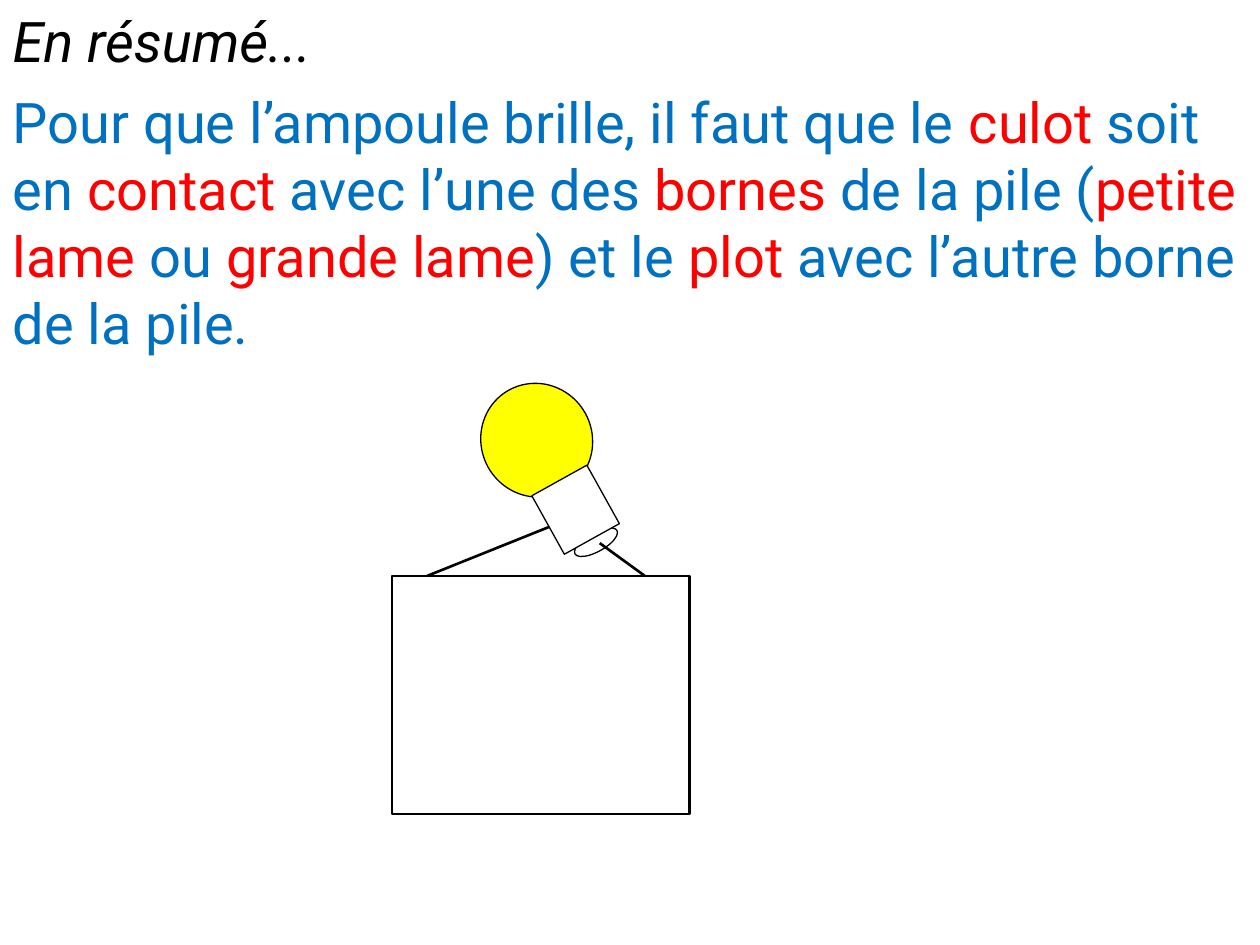
"""Build a summary slide on how a bulb must touch a battery to light up."""
from lxml import etree
from pptx import Presentation, util as u
from pptx.dml.color import RGBColor
from pptx.enum import shapes, text
from pptx.oxml import ns

FONT, SIZE = "Roboto", 32
BLACK, WHITE, BLUE, RED, YELLOW = "000000", "FFFFFF", "0070C0", "FF0000", "FFFF00"
WIDTH, HEIGHT, TITLE_HEIGHT, BODY_HEIGHT = 25.4, 19.05, 1.63, 5.74
BATTERY_TOP, TILT = 11.61, 330.9

TITLE = [("En résumé...", BLACK)]
SUMMARY = [
    ("Pour que l’ampoule brille, il faut que le ", BLUE), ("culot", RED),
    (" soit en ", BLUE), ("contact", RED),
    (" avec l’une des ", BLUE), ("bornes ", RED),
    ("de la pile (", BLUE), ("petite lame", RED),
    (" ou ", BLUE), ("grande lame", RED),
    (") et le ", BLUE), ("plot", RED),
    (" avec l’autre borne de la pile.", BLUE),
]
OVAL, RECTANGLE = shapes.MSO_SHAPE.OVAL, shapes.MSO_SHAPE.RECTANGLE
CONTACT = (OVAL, (11.53, 10.74, 0.97, 0.38), WHITE, 0.75, TILT)
BATTERY = (RECTANGLE, (7.9, BATTERY_TOP, 6, 4.8), WHITE, 1.5, 0)
GLASS = (OVAL, (9.7, 7.72, 2.24, 2.31), YELLOW, 0.75, TILT)
BASE = (RECTANGLE, (10.97, 9.6, 1.27, 1.35), WHITE, 0.75, TILT)
WIRES = [(8.61, BATTERY_TOP, 11.15, 10.59), (12.09, 10.95, 13, BATTERY_TOP)]


def color(hex_value):
    return RGBColor.from_string(hex_value)


def set_line(item, width):
    item.line.color.rgb = color(BLACK)
    item.line.width = u.Pt(width)


def fill_placeholder(box, top, height, spans, italic=False):
    box.left, box.top, box.width, box.height = (
        u.Cm(value) for value in (0, top, WIDTH, height))
    frame = box.text_frame
    frame.word_wrap = True
    frame.auto_size = text.MSO_AUTO_SIZE.NONE
    frame.vertical_anchor = text.MSO_ANCHOR.TOP
    para = frame.paragraphs[0]
    para.alignment = text.PP_ALIGN.LEFT
    para.space_before = u.Pt(0)
    properties = para._p.get_or_add_pPr()
    properties.set("marL", "0")
    properties.set("indent", "0")
    etree.SubElement(properties, ns.qn("a:buNone"))
    for words, hex_value in spans:
        span = para.add_run()
        span.text = words
        span.font.name, span.font.size = FONT, u.Pt(SIZE)
        span.font.italic = italic
        span.font.color.rgb = color(hex_value)


def add_part(page, kind, place, fill, width, rotation):
    part = page.shapes.add_shape(kind, *(u.Cm(value) for value in place))
    part.shadow.inherit = False
    part.rotation = rotation
    part.fill.solid()
    part.fill.fore_color.rgb = color(fill)
    set_line(part, width)


def add_wire(page, ends):
    wire = page.shapes.add_connector(
        shapes.MSO_CONNECTOR.STRAIGHT, *(u.Cm(value) for value in ends))
    set_line(wire, 1.5)
    etree.SubElement(wire._element.spPr, ns.qn("a:effectLst"))


def main():
    deck = Presentation()
    deck.slide_width, deck.slide_height = u.Cm(WIDTH), u.Cm(HEIGHT)
    page = deck.slides.add_slide(deck.slide_layouts[1])
    title, body = page.placeholders
    fill_placeholder(title, 0, TITLE_HEIGHT, TITLE, italic=True)
    fill_placeholder(body, TITLE_HEIGHT, BODY_HEIGHT, SUMMARY)
    for part in (CONTACT, BATTERY):
        add_part(page, *part)
    for ends in WIRES:
        add_wire(page, ends)
    for part in (GLASS, BASE):
        add_part(page, *part)
    deck.save("out.pptx")


if __name__ == "__main__":
    main()
